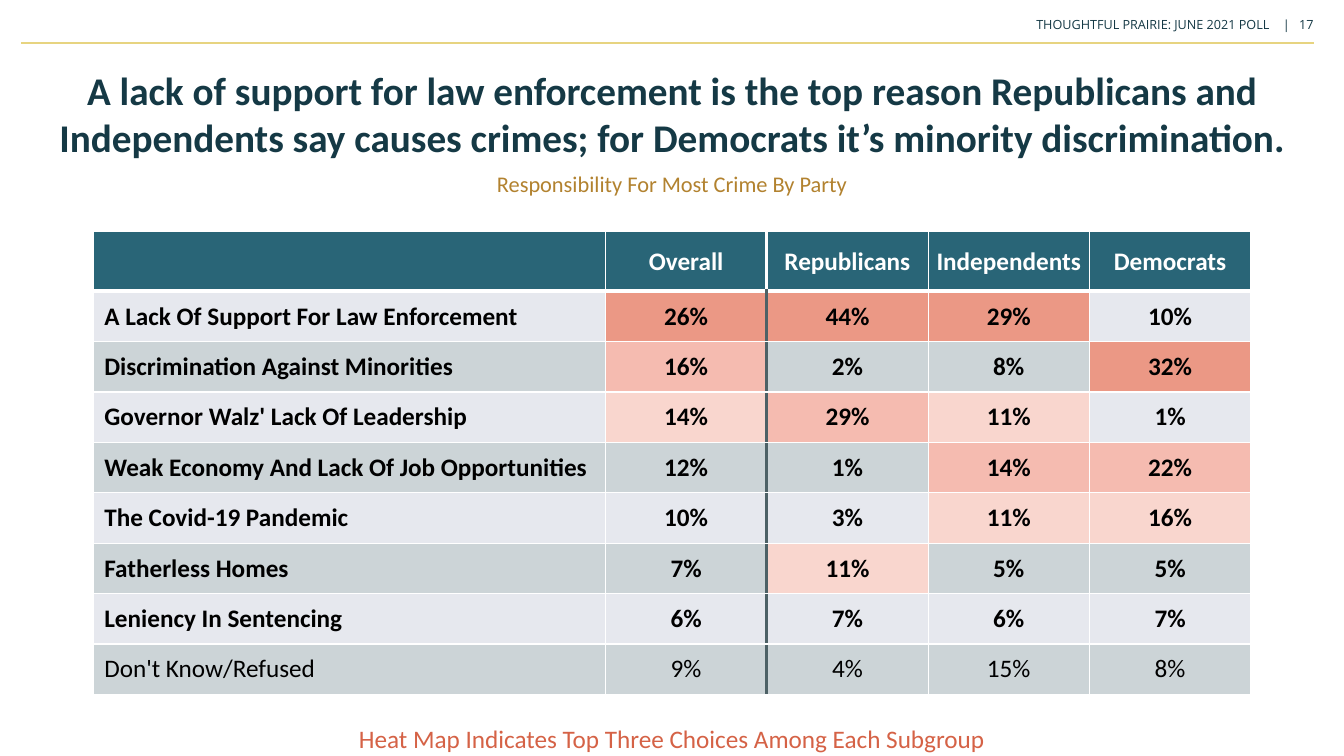
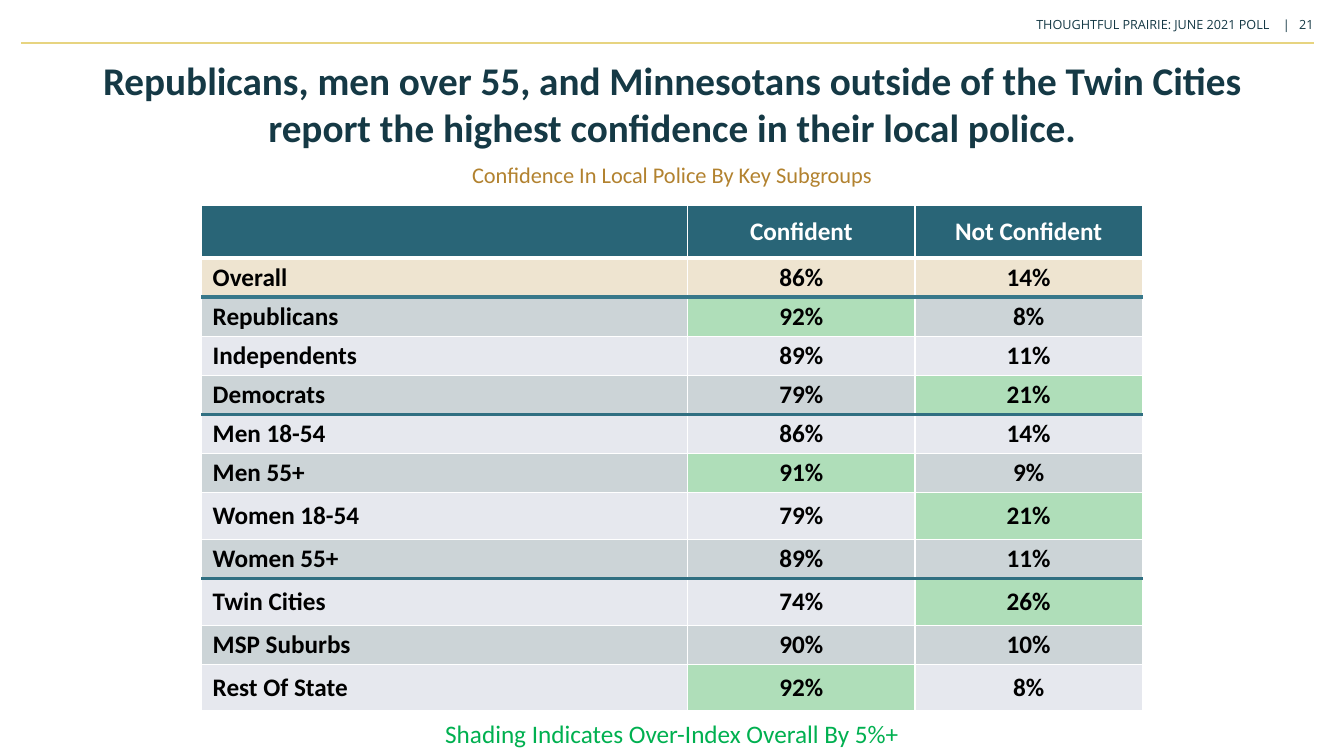
from dataclasses import dataclass, field
from typing import Callable, Optional

from lxml import etree
from pptx import Presentation, util as u
from pptx.dml.color import RGBColor
from pptx.enum import shapes, text
from pptx.oxml.ns import qn

WIDTH, HEIGHT = 133.3, 75
BODY_FONT, HEADER_FONT = "Calibri", "Open Sans"
WHITE, BLACK = "FFFFFF", "000000"
NAVY, TEAL, GOLD, YELLOW = "153945", "296577", "B2822F", "E7D480"
CORAL, GREEN = "D56246", "00B050"
SLATE, RULE_TEAL, RULE_LIGHT = "4D6166", "306F81", "38788A"
BANDS = ("E6E8EE", "CCD4D7")
HEAT = ("EB9885", "F5BBB0", "F9D6CE")
OVERALL, OVER_INDEX = "EEE4D0", "AFDEB9"

Shades = dict[tuple[int, int], str]


@dataclass(frozen=True)
class Row:
    label: str
    values: tuple[int, ...]
    height: float
    bold: bool = True


@dataclass(frozen=True)
class Line:
    text: str
    top: float
    width: float
    height: float
    size: float
    color: str
    bold: bool = False


@dataclass(frozen=True)
class PollTable:
    top: float
    label_width: float
    value_width: float
    header_height: float
    heads: tuple[str, ...]
    rows: tuple[Row, ...]
    shade: Callable[[tuple[Row, ...]], Shades]
    column_rule: Optional[int] = None
    row_rules: dict[int, str] = field(default_factory=dict)


@dataclass(frozen=True)
class PollSlide:
    number: int
    lines: tuple[Line, ...]
    table: PollTable


def grid(n: float) -> int:
    return u.Inches(n / 10)


def rgb(value: str) -> RGBColor:
    return RGBColor.from_string(value)


def style(p, size: float, color: str, bold: bool = False, name: str = BODY_FONT) -> None:
    for r in p.runs:
        r.font.size, r.font.bold, r.font.name = u.Pt(size), bold, name
        r.font.color.rgb = rgb(color)


def top_three(rows: tuple[Row, ...]) -> Shades:
    shades = {}
    named = [row for row in rows if row.bold]
    for c, column in enumerate(zip(*(row.values for row in named)), 1):
        ranked = sorted(set(column), reverse=True)[:len(HEAT)]
        for i, value in enumerate(column, 1):
            if value in ranked:
                shades[i, c] = HEAT[ranked.index(value)]
    return shades


def over_index(rows: tuple[Row, ...]) -> Shades:
    overall = rows[0].values
    shades = {(1, c): OVERALL for c in range(len(overall) + 1)}
    for i, row in enumerate(rows, 1):
        for c, value in enumerate(row.values, 1):
            if value - overall[c - 1] >= 5:
                shades[i, c] = OVER_INDEX
    return shades


def add_header(s, number: int) -> None:
    line = s.shapes.add_connector(
        shapes.MSO_CONNECTOR.STRAIGHT, grid(130.3), grid(4.3), grid(2.1), grid(4.3))
    line.line.color.rgb = rgb(YELLOW)
    line.line.width = u.Pt(1.25)
    etree.SubElement(line._element.spPr, qn("a:effectLst"))
    tf = s.shapes.add_textbox(grid(79.9), grid(1.2), grid(51.4), grid(3.1)).text_frame
    tf.word_wrap = True
    p = tf.paragraphs[0]
    p.text = f"\tTHOUGHTFUL PRAIRIE: JUNE 2021 POLL\t|\t{number}"
    tabs = etree.SubElement(p._p.get_or_add_pPr(), qn("a:tabLst"))
    for position, align in ((45, "r"), (46.7, "ctr"), (49.4, "r")):
        etree.SubElement(tabs, qn("a:tab"), pos=str(grid(position)), algn=align)
    style(p, 9, NAVY, name=HEADER_FONT)


def add_line(s, line: Line) -> None:
    sp = s.shapes.add_textbox(grid((WIDTH - line.width) / 2), grid(line.top),
                              grid(line.width), grid(line.height))
    tf = sp.text_frame
    tf.word_wrap = True
    tf.vertical_anchor = text.MSO_ANCHOR.MIDDLE
    p = tf.paragraphs[0]
    p.text, p.alignment = line.text, text.PP_ALIGN.CENTER
    style(p, line.size, line.color, line.bold)


def row_edge(t: PollTable, edge: int) -> tuple[str, float]:
    if edge == 1:
        return WHITE, 3
    return (t.row_rules[edge - 1], 3) if edge - 1 in t.row_rules else (WHITE, 1)


def column_edge(t: PollTable, edge: int, row: int) -> tuple[str, float]:
    if edge != t.column_rule:
        return WHITE, 1
    return (SLATE if row else WHITE), 2.25


def set_borders(cell, t: PollTable, i: int, c: int) -> None:
    tc_pr = cell._tc.get_or_add_tcPr()
    edges = {"L": column_edge(t, c, i), "R": column_edge(t, c + 1, i),
             "T": row_edge(t, i), "B": row_edge(t, i + 1)}
    for side, (color, width) in edges.items():
        ln = etree.SubElement(tc_pr, qn(f"a:ln{side}"), w=str(u.Pt(width)))
        fill = etree.SubElement(ln, qn("a:solidFill"))
        etree.SubElement(fill, qn("a:srgbClr"), val=color)


def fill_cell(cell, content: str, fill: str, color: str, bold: bool,
              margin: float, centred: bool) -> None:
    cell.fill.solid()
    cell.fill.fore_color.rgb = rgb(fill)
    cell.vertical_anchor = text.MSO_ANCHOR.MIDDLE
    cell.margin_left = grid(margin if centred else margin + 1)
    cell.margin_right = cell.margin_top = cell.margin_bottom = grid(margin)
    p = cell.text_frame.paragraphs[0]
    p.text = content
    p.alignment = text.PP_ALIGN.CENTER if centred else text.PP_ALIGN.LEFT
    style(p, 18, color, bold)


def add_poll_table(s, t: PollTable) -> None:
    widths = [t.label_width] + [t.value_width] * len(t.heads)
    heights = [t.header_height] + [row.height for row in t.rows]
    table = s.shapes.add_table(
        len(heights), len(widths), grid((WIDTH - sum(widths)) / 2), grid(t.top),
        grid(sum(widths)), grid(sum(heights))).table
    table.horz_banding = False
    for column, width in zip(table.columns, widths):
        column.width = grid(width)
    for table_row, height in zip(table.rows, heights):
        table_row.height = grid(height)
    shades = t.shade(t.rows)
    contents = [("", *t.heads)]
    contents += [(row.label, *(f"{v}%" for v in row.values)) for row in t.rows]
    for i, cells in enumerate(contents):
        for c, content in enumerate(cells):
            cell = table.cell(i, c)
            set_borders(cell, t, i, c)
            if i == 0:
                fill_cell(cell, content, TEAL, WHITE, True, 0.5, True)
            else:
                fill = shades.get((i, c), BANDS[(i - 1) % 2])
                fill_cell(cell, content, fill, BLACK, t.rows[i - 1].bold, 0.1, c > 0)


SLIDES = (
    PollSlide(
        17,
        (Line("A lack of support for law enforcement is the top reason Republicans and "
              "Independents say causes crimes; for Democrats it’s minority discrimination.",
              6.1, 133.3, 10.3, 28, NAVY, True),
         Line("Responsibility For Most Crime By Party", 16.2, 100.2, 4, 16, GOLD),
         Line("Heat Map Indicates Top Three Choices Among Each Subgroup",
              71.3, 78.6, 4, 18, CORAL)),
        PollTable(
            23, 50.8, 16, 5.9,
            ("Overall", "Republicans", "Independents", "Democrats"),
            (Row("A Lack Of Support For Law Enforcement", (26, 44, 29, 10), 5),
             Row("Discrimination Against Minorities", (16, 2, 8, 32), 5),
             Row("Governor Walz' Lack Of Leadership", (14, 29, 11, 1), 5),
             Row("Weak Economy And Lack Of Job Opportunities", (12, 1, 14, 22), 5),
             Row("The Covid-19 Pandemic", (10, 3, 11, 16), 5),
             Row("Fatherless Homes", (7, 11, 5, 5), 5),
             Row("Leniency In Sentencing", (6, 7, 6, 7), 5),
             Row("Don't Know/Refused", (9, 4, 15, 8), 5, False)),
            top_three, column_rule=2)),
    PollSlide(
        21,
        (Line("Republicans, men over 55, and Minnesotans outside of the Twin Cities "
              "report the highest confidence in their local police.",
              5.1, 122, 10.4, 28, NAVY, True),
         Line("Confidence In Local Police By Key Subgroups", 15.3, 96.1, 4, 16, GOLD),
         Line("Shading Indicates Over-Index Overall By 5%+", 70.8, 52, 4, 18, GREEN)),
        PollTable(
            20.4, 48.2, 22.55, 5.2,
            ("Confident", "Not Confident"),
            (Row("Overall", (86, 14), 3.88),
             Row("Republicans", (92, 8), 3.88),
             Row("Independents", (89, 11), 3.88),
             Row("Democrats", (79, 21), 3.88),
             Row("Men 18-54", (86, 14), 3.88),
             Row("Men 55+", (91, 9), 3.88),
             Row("Women 18-54", (79, 21), 4.64),
             Row("Women 55+", (89, 11), 3.88),
             Row("Twin Cities", (74, 26), 4.64),
             Row("MSP Suburbs", (90, 10), 3.88),
             Row("Rest Of State", (92, 8), 4.64)),
            over_index, row_rules={1: RULE_LIGHT, 4: RULE_TEAL, 8: RULE_TEAL})),
)


def main() -> None:
    prs = Presentation()
    prs.slide_width, prs.slide_height = grid(WIDTH), grid(HEIGHT)
    for slide in SLIDES:
        s = prs.slides.add_slide(prs.slide_layouts[6])
        add_header(s, slide.number)
        add_poll_table(s, slide.table)
        for line in slide.lines:
            add_line(s, line)
    prs.save("out.pptx")


if __name__ == "__main__":
    main()
